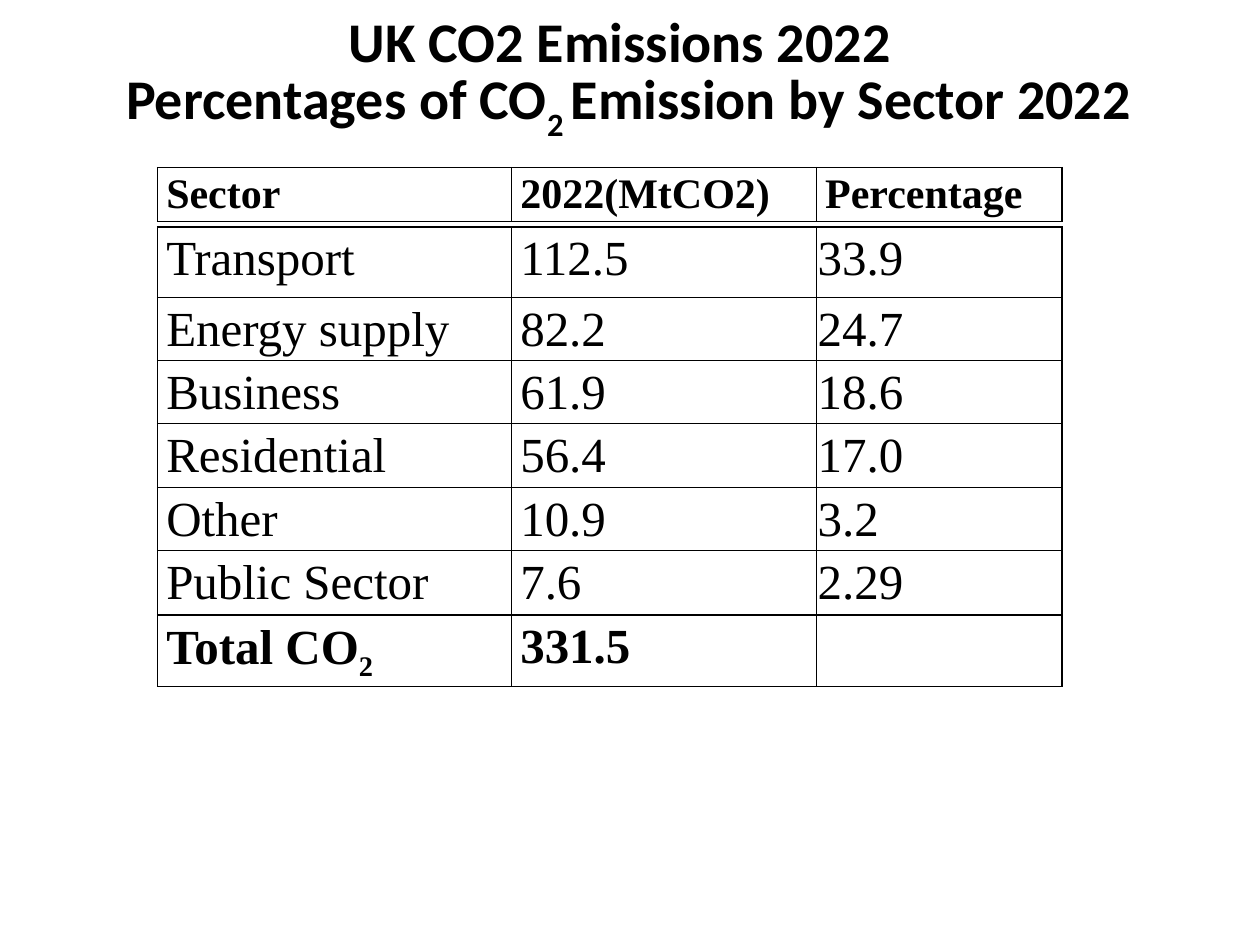
import pptx
import pptx.util
import pptx.dml.color
import pptx.enum.text
import pptx.oxml
from lxml import etree

Inches, Pt = pptx.util.Inches, pptx.util.Pt
PP_ALIGN, ANCHOR = pptx.enum.text.PP_ALIGN, pptx.enum.text.MSO_ANCHOR

BLACK = "000000"
TITLE = [("UK CO2 Emissions 2022", 0)]
SUBTITLE = [("Percentages of CO", 0), ("2 ", -30), ("Emission by Sector 2022", 0)]
HEADER = ["Sector", "2022(MtCO2)", "Percentage"]
SECTORS = [
    ["Transport", "112.5", "33.9"],
    ["Energy supply", "82.2", "24.7"],
    ["Business", "61.9", "18.6"],
    ["Residential", "56.4", "17.0"],
    ["Other", "10.9", "3.2"],
    ["Public Sector", "7.6", "2.29"],
    [[("Total CO", 0), ("2", -25)], "331.5", ""],
]
TABLE_LEFT = 1.25
COL_WIDTHS = [2.81, 2.42, 1.95]
SECTOR_HEIGHTS = [0.56, 0.5, 0.5, 0.51, 0.5, 0.51, 0.57]


def rgb(color):
    return pptx.dml.color.RGBColor.from_string(color)


def add_runs(p, runs, font, size, bold):
    """Add (text, baseline percent) pairs to a paragraph."""
    for text, baseline in runs:
        r = p.add_run()
        r.text = text
        r.font.name, r.font.size, r.font.bold = font, Pt(size), bold
        r.font.color.rgb = rgb(BLACK)
        if baseline:
            r.font._element.set("baseline", str(baseline * 1000))


def set_margins(target, left, top, right, bottom):
    target.margin_left, target.margin_top = Inches(left), Inches(top)
    target.margin_right, target.margin_bottom = Inches(right), Inches(bottom)


def add_heading(slide, box, runs, align, anchor, left_margin=0.1):
    s = slide.shapes.add_textbox(*map(Inches, box))
    tf = s.text_frame
    tf.word_wrap = True
    tf.vertical_anchor = anchor
    set_margins(tf, left_margin, 0.05, 0.1, 0.05)
    p = tf.paragraphs[0]
    p.alignment = align
    add_runs(p, runs, "Calibri", 32, True)


def border_cell(cell):
    tc_pr = cell._tc.get_or_add_tcPr()
    for i, side in enumerate(("lnL", "lnR", "lnT", "lnB")):
        ln = etree.Element(pptx.oxml.ns.qn(f"a:{side}"), w=str(Pt(1)))
        fill = etree.SubElement(ln, pptx.oxml.ns.qn("a:solidFill"))
        etree.SubElement(fill, pptx.oxml.ns.qn("a:srgbClr"), val=BLACK)
        tc_pr.insert(i, ln)


def add_grid(slide, top, rows, heights, size, margins, bold_row):
    """Add a ruled table; margins holds the side and top inset of each column."""
    table = slide.shapes.add_table(
        len(rows), len(COL_WIDTHS), Inches(TABLE_LEFT), Inches(top),
        Inches(sum(COL_WIDTHS)), Inches(sum(heights))).table
    table.first_row = table.horz_banding = False
    for col, width in zip(table.columns, COL_WIDTHS):
        col.width = Inches(width)
    for i, (values, height) in enumerate(zip(rows, heights)):
        table.rows[i].height = Inches(height)
        for j, value in enumerate(values):
            cell = table.cell(i, j)
            cell.fill.background()
            border_cell(cell)
            side, inset_top = margins[j]
            set_margins(cell, side, inset_top, side, 0)
            if value:
                runs = [(value, 0)] if isinstance(value, str) else value
                p = cell.text_frame.paragraphs[0]
                p.line_spacing = 1.07
                add_runs(p, runs, "Times New Roman", size, i == bold_row)


prs = pptx.Presentation()
prs.slide_width, prs.slide_height = Inches(10), Inches(7.5)
slide = prs.slides.add_slide(prs.slide_layouts[6])

add_grid(slide, 1.33, [HEADER], [0.43], 24, [(0.07, 0)] * 3, bold_row=0)
add_grid(slide, 1.8, SECTORS, SECTOR_HEIGHTS, 28,
         [(0.07, 0.01), (0.07, 0.01), (0.01, 0.01)], bold_row=len(SECTORS) - 1)
add_heading(slide, (0, 0, 9.69, 1.18), SUBTITLE, PP_ALIGN.LEFT, ANCHOR.BOTTOM,
            left_margin=1)
add_heading(slide, (1.56, 0, 6.72, 0.64), TITLE, PP_ALIGN.CENTER, ANCHOR.TOP)

prs.save("out.pptx")
